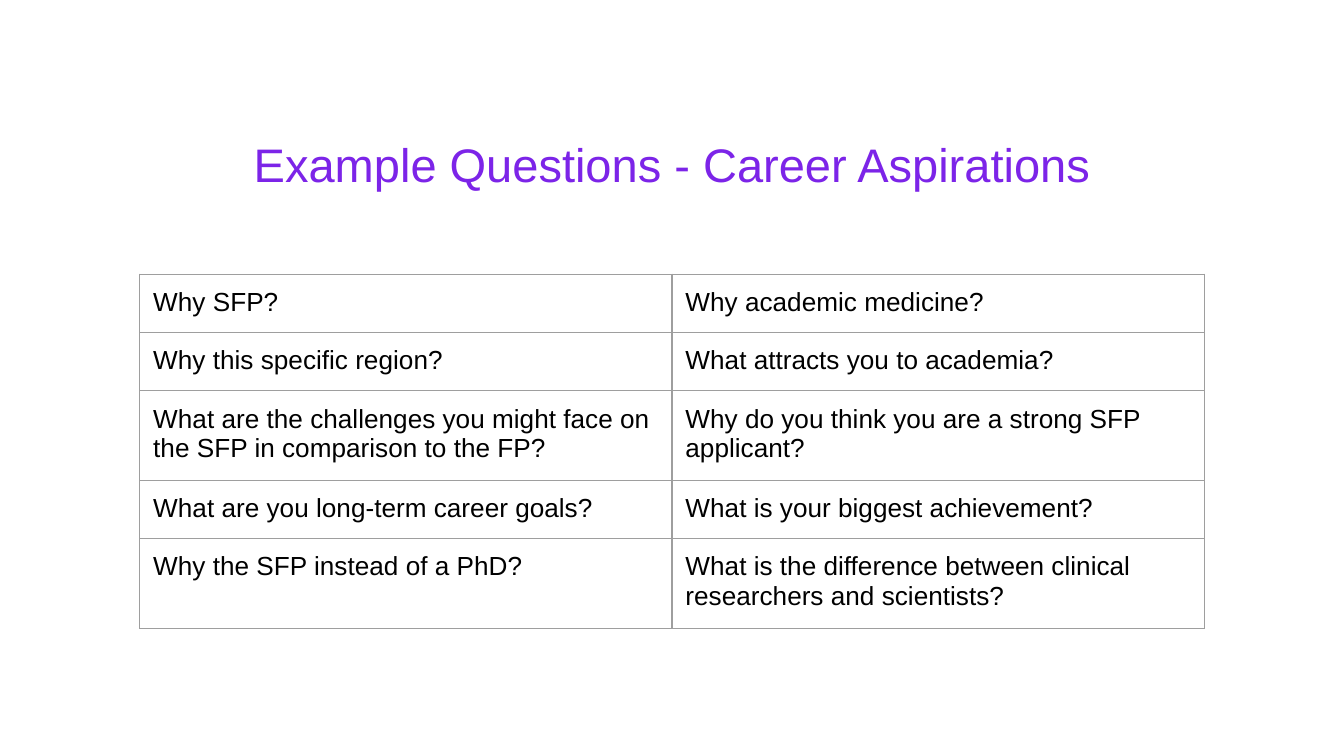
"""Build the career aspirations question slide."""
from dataclasses import dataclass

from lxml import etree
from pptx import Presentation, util as u
from pptx.dml.color import RGBColor
from pptx.enum import text
from pptx.oxml.ns import qn


@dataclass(frozen=True)
class Theme:
    font: str = "Arial"
    title_color: str = "7C24E8"
    body_color: str = "000000"
    border_color: str = "9E9E9E"
    title_size: float = 25.2
    body_size: float = 14
    border_width: float = 0.75
    inset: float = 0.1


@dataclass(frozen=True)
class QuestionRow:
    left: str
    right: str


THEME = Theme()
TITLE = "Example Questions - Career Aspirations"
QUESTIONS = [
    QuestionRow("Why SFP?", "Why academic medicine?"),
    QuestionRow("Why this specific region?", "What attracts you to academia?"),
    QuestionRow("What are the challenges you might face on the SFP in comparison to the FP?",
                "Why do you think you are a strong SFP applicant?"),
    QuestionRow("What are you long-term career goals?", "What is your biggest achievement?"),
    QuestionRow("Why the SFP instead of a PhD?",
                "What is the difference between clinical researchers and scientists?"),
]


def set_text(tf, content: str, size: float, color: str, align) -> None:
    p = tf.paragraphs[0]
    p.text = content
    p.alignment = align
    p.font.name = THEME.font
    p.font.size = u.Pt(size)
    p.font.color.rgb = RGBColor.from_string(color)


def set_margins(box) -> None:
    box.margin_left = box.margin_right = u.Inches(THEME.inset)
    box.margin_top = box.margin_bottom = u.Inches(THEME.inset)


def add_borders(cell) -> None:
    tc_pr = cell._tc.get_or_add_tcPr()
    for i, side in enumerate(("a:lnL", "a:lnR", "a:lnT", "a:lnB")):
        ln = etree.Element(qn(side), w=str(u.Pt(THEME.border_width)))
        fill = etree.SubElement(ln, qn("a:solidFill"))
        etree.SubElement(fill, qn("a:srgbClr"), val=THEME.border_color)
        tc_pr.insert(i, ln)


def add_title(s) -> None:
    sp = s.shapes.add_textbox(u.Inches(0.34), u.Inches(0.91), u.Inches(9.32), u.Inches(0.63))
    tf = sp.text_frame
    tf.word_wrap = True
    set_margins(tf)
    set_text(tf, TITLE, THEME.title_size, THEME.title_color, text.PP_ALIGN.CENTER)


def add_questions(s, rows: list[QuestionRow]) -> None:
    col_width, row_height, frame_size = 3.96, 0.42, 3.28
    frame = s.shapes.add_table(len(rows), 2, u.Inches(1.04), u.Inches(2.04),
                               u.Inches(2 * col_width), u.Inches(row_height * len(rows)))
    table = frame.table
    table.first_row = table.horz_banding = False
    for row, question in zip(table.rows, rows):
        for cell, content in zip(row.cells, (question.left, question.right)):
            set_margins(cell)
            cell.fill.background()
            add_borders(cell)
            set_text(cell.text_frame, content, THEME.body_size, THEME.body_color,
                     text.PP_ALIGN.LEFT)
    frame.width = frame.height = u.Inches(frame_size)


def main() -> None:
    prs = Presentation()
    prs.slide_width = u.Inches(10)
    prs.slide_height = u.Inches(10 * 9 / 16)
    s = prs.slides.add_slide(prs.slide_layouts[6])
    add_title(s)
    add_questions(s, QUESTIONS)
    prs.save("out.pptx")


if __name__ == "__main__":
    main()
